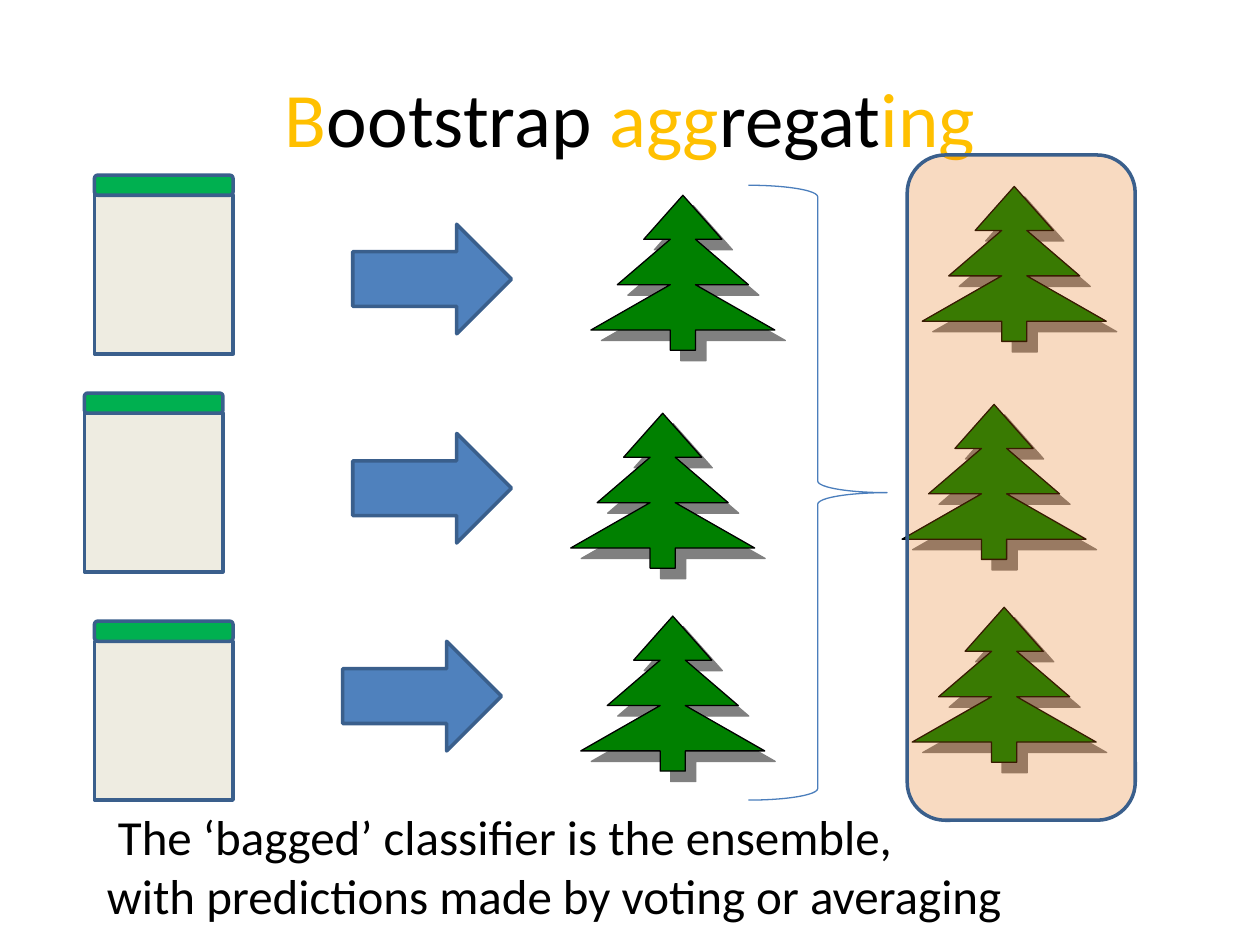
"""Build the bootstrap aggregating slide."""
import dataclasses

import lxml.etree
import pptx
import pptx.dml.color
import pptx.enum.shapes
import pptx.enum.text
import pptx.oxml.ns
import pptx.util

Inches = pptx.util.Inches
Shapes = pptx.enum.shapes.MSO_SHAPE


@dataclasses.dataclass(frozen=True)
class Theme:
    font: str = "Calibri"
    title_size: int = 44
    body_size: int = 28
    text: str = "000000"
    accent: str = "FFC000"
    sample: str = "EEECE1"
    sample_header: str = "00B050"
    arrow: str = "4F81BD"
    outline: str = "3A5F8C"
    brace: str = "4B7EBC"
    tree: str = "008000"
    tree_shadow: str = "808080"
    ensemble: str = "E46C0A"
    thick: float = 2
    thin: float = 0.75


class SlideBuilder:
    def __init__(self, slide, theme):
        self.slide = slide
        self.theme = theme

    def color(self, value):
        return pptx.dml.color.RGBColor.from_string(value)

    def style(self, shape, fill, line, width):
        shape.shadow.inherit = False
        if fill:
            shape.fill.solid()
            shape.fill.fore_color.rgb = self.color(fill)
        else:
            shape.fill.background()
        shape.line.color.rgb = self.color(line)
        shape.line.width = pptx.util.Pt(width)

    def shape(self, kind, left, top, width, height, fill):
        shape = self.slide.shapes.add_shape(
            kind, Inches(left), Inches(top), Inches(width), Inches(height))
        self.style(shape, fill, self.theme.outline, self.theme.thick)
        return shape

    def sample(self, left, top):
        header = 0.16
        self.shape(Shapes.RECTANGLE, left, top + header, 1.1, 1.26, self.theme.sample)
        self.shape(Shapes.ROUNDED_RECTANGLE, left, top, 1.1, header, self.theme.sample_header)

    def arrow(self, left, top):
        self.shape(Shapes.RIGHT_ARROW, left, top, 1.26, 0.87, self.theme.arrow)

    def tree(self, left, top):
        right_side = [(0, 0), (0.31, 0.35), (0.1, 0.35), (0.52, 0.71),
                      (0.1, 0.71), (0.73, 1.07), (0.1, 1.07), (0.1, 1.23)]
        left_side = [(-x, y) for x, y in reversed(right_side[1:])]
        points = [(Inches(left + 0.73 + x), Inches(top + y))
                  for x, y in right_side + left_side]
        builder = self.slide.shapes.build_freeform(*points[0])
        builder.add_line_segments(points[1:], close=True)
        shape = builder.convert_to_shape()
        self.style(shape, self.theme.tree, self.theme.text, self.theme.thin)
        name = pptx.oxml.ns.qn
        effects = shape._element.spPr.find(name("a:effectLst"))
        shadow = lxml.etree.SubElement(
            effects, name("a:outerShdw"), dist=str(pptx.util.Pt(8.5)),
            dir="2700000", algn="ctr", rotWithShape="0")
        lxml.etree.SubElement(shadow, name("a:srgbClr"), val=self.theme.tree_shadow)

    def ensemble(self, left, top, width, height):
        shape = self.shape(
            Shapes.ROUNDED_RECTANGLE, left, top, width, height, self.theme.ensemble)
        name = pptx.oxml.ns.qn
        color = shape._element.spPr.find(name("a:solidFill")).find(name("a:srgbClr"))
        lxml.etree.SubElement(color, name("a:alpha"), val="25000")

    def brace(self, left, top, width, height):
        shape = self.shape(Shapes.RIGHT_BRACE, left, top, width, height, None)
        self.style(shape, None, self.theme.brace, self.theme.thin)

    def text_box(self, left, top, width, height):
        return self.slide.shapes.add_textbox(
            Inches(left), Inches(top), Inches(width), Inches(height)).text_frame

    def format_run(self, run, size, color):
        run.font.name = self.theme.font
        run.font.size = pptx.util.Pt(size)
        run.font.color.rgb = self.color(color)

    def title(self, parts):
        frame = self.text_box(0.5, 0.3, 9, 1.25)
        frame.word_wrap = True
        frame.vertical_anchor = pptx.enum.text.MSO_ANCHOR.MIDDLE
        paragraph = frame.paragraphs[0]
        paragraph.alignment = pptx.enum.text.PP_ALIGN.CENTER
        for text, color in parts:
            run = paragraph.add_run()
            run.text = text
            self.format_run(run, self.theme.title_size, color)

    def caption(self, text):
        frame = self.text_box(0.75, 6.35, 7.38, 1.04)
        frame.word_wrap = False
        frame.auto_size = pptx.enum.text.MSO_AUTO_SIZE.SHAPE_TO_FIT_TEXT
        frame.text = text
        for paragraph in frame.paragraphs:
            for run in paragraph.runs:
                self.format_run(run, self.theme.body_size, self.theme.text)


def main():
    presentation = pptx.Presentation()
    presentation.slide_width = Inches(10)
    presentation.slide_height = Inches(7.5)
    slide = presentation.slides.add_slide(presentation.slide_layouts[6])
    theme = Theme()
    builder = SlideBuilder(slide, theme)

    builder.title([("B", theme.accent), ("ootstrap ", theme.text), ("agg", theme.accent),
                   ("regat", theme.text), ("ing", theme.accent)])
    for left, top in [(0.75, 1.39), (0.67, 3.12), (0.75, 4.93)]:
        builder.sample(left, top)
    for left, top in [(2.8, 1.78), (2.8, 3.44), (2.72, 5.09)]:
        builder.arrow(left, top)
    trees = [(4.69, 1.55), (4.53, 3.28), (4.61, 4.89)]
    for left, top in trees:
        builder.tree(left, top)
    builder.caption(" The ‘bagged’ classifier is the ensemble,\n"
                    "with predictions made by voting or averaging")
    for left, top in trees:
        builder.tree(left + 2.63, top - 0.07)
    builder.ensemble(7.2, 1.23, 1.81, 5.28)
    builder.brace(5.94, 1.47, 1.1, 4.88)
    presentation.save("out.pptx")


if __name__ == "__main__":
    main()
